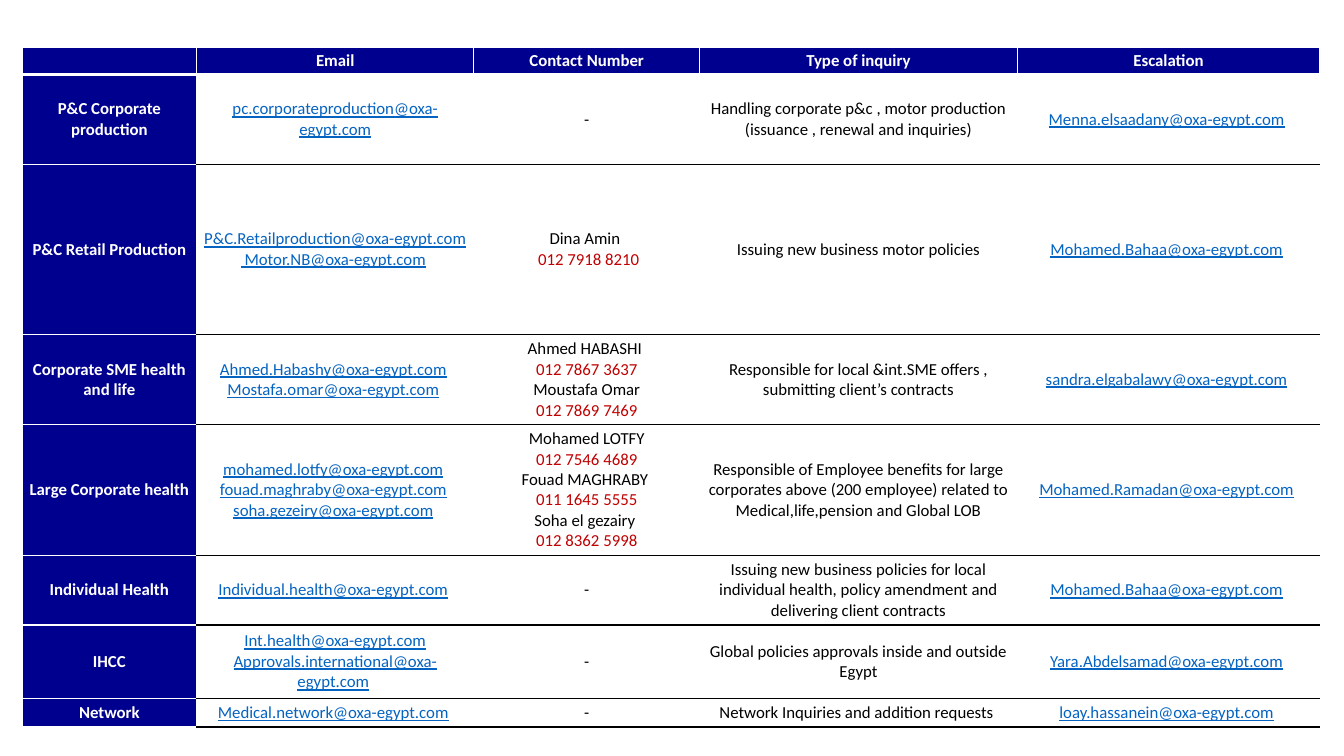
from pptx import Presentation
from pptx.dml.color import RGBColor
from pptx.enum.text import MSO_ANCHOR, PP_ALIGN
from pptx.oxml import parse_xml
from pptx.oxml.ns import nsdecls
from pptx.util import Inches, Pt

THEME = {
    "font": "Calibri", "size": 12,
    "navy": "00008F", "white": "FFFFFF", "black": "000000",
    "link": "0563C1", "phone": "C00000",
}

# Each line of a cell is one paragraph
ROWS = [
    ["", "Email", "Contact Number", "Type of inquiry", "Escalation"],
    ["P&C Corporate production", "pc.corporateproduction@oxa-egypt.com", "-",
     "Handling corporate p&c , motor production (issuance , renewal and inquiries)",
     "Menna.elsaadany@oxa-egypt.com "],
    ["P&C Retail Production",
     "P&C.Retailproduction@oxa-egypt.com\n Motor.NB@oxa-egypt.com ",
     "Dina Amin \n 012 7918 8210",
     "Issuing new business motor policies", "Mohamed.Bahaa@oxa-egypt.com "],
    ["Corporate SME health and life",
     "Ahmed.Habashy@oxa-egypt.com \nMostafa.omar@oxa-egypt.com ",
     "Ahmed HABASHI \n012 7867 3637\nMoustafa Omar\n012 7869 7469",
     "Responsible for local &int.SME offers , submitting client’s contracts",
     "sandra.elgabalawy@oxa-egypt.com "],
    ["Large Corporate health",
     "mohamed.lotfy@oxa-egypt.com \nfouad.maghraby@oxa-egypt.com \n"
     "soha.gezeiry@oxa-egypt.com ",
     "Mohamed LOTFY\n012 7546 4689\nFouad MAGHRABY \n011 1645 5555\n"
     "Soha el gezairy \n012 8362 5998",
     "Responsible of Employee benefits for large corporates above (200 employee) "
     "related to Medical,life,pension and Global LOB",
     "Mohamed.Ramadan@oxa-egypt.com "],
    ["Individual Health", "Individual.health@oxa-egypt.com ", "-",
     "Issuing new business policies for local individual health, "
     "policy amendment and delivering client contracts",
     "Mohamed.Bahaa@oxa-egypt.com "],
    ["IHCC", "Int.health@oxa-egypt.com\nApprovals.international@oxa-egypt.com ", "-",
     "Global policies approvals inside and outside Egypt",
     "Yara.Abdelsamad@oxa-egypt.com "],
    ["Network", "Medical.network@oxa-egypt.com ", "-",
     "Network Inquiries and addition requests ", "loay.hassanein@oxa-egypt.com "],
]
WIDTHS = [1.73, 2.75, 2.24, 3.15, 3]
HEIGHTS = [0.27, 0.89, 1.69, 0.63, 1.2, 0.63, 0.73, 0.16]


def add_edge(cell, side, color, width):
    cell._tc.get_or_add_tcPr().append(parse_xml(
        f'<a:ln{side} {nsdecls("a")} w="{Pt(width)}"><a:solidFill>'
        f'<a:srgbClr val="{THEME[color]}"/></a:solidFill></a:ln{side}>'))


def style_run(run, color, bold=False, line=False):
    font = run.font
    font.name, font.size = THEME["font"], Pt(THEME["size"])
    font.bold, font.underline = bold, line
    font.color.rgb = RGBColor.from_string(THEME[color])


prs = Presentation()
prs.slide_width, prs.slide_height = Inches(13.33), Inches(7.5)
slide = prs.slides.add_slide(prs.slide_layouts[6])

# Contact table
frame = slide.shapes.add_table(len(ROWS), len(WIDTHS), Inches(0.22), Inches(0.47),
                               Inches(12.87), Inches(6.67))
table = frame.table
for col, width in zip(table.columns, WIDTHS):
    col.width = Inches(width)
for row, height in zip(table.rows, HEIGHTS):
    row.height = Inches(height)
frame.height = Inches(6.67)

for r, texts in enumerate(ROWS):
    for c, text in enumerate(texts):
        cell = table.cell(r, c)
        head = r == 0
        label = head or c == 0

        # Borders and fill
        add_edge(cell, "L", "white", 1)
        add_edge(cell, "R", "white", 1)
        add_edge(cell, "T", "white" if label or r == 1 else "black", 1)
        add_edge(cell, "B", "white" if label else "black", 3 if head else 1)
        if label:
            cell.fill.solid()
            cell.fill.fore_color.rgb = RGBColor.from_string(THEME["navy"])
        else:
            cell.fill.background()

        # Text
        cell.vertical_anchor = MSO_ANCHOR.MIDDLE
        cell.margin_left = cell.margin_right = Inches(0.05 if head else 0.07)
        cell.margin_top = cell.margin_bottom = Inches(0.03 if head else 0.04)
        cell.text_frame.text = text
        for para in cell.text_frame.paragraphs:
            para.alignment = PP_ALIGN.CENTER
            para.font.size = Pt(THEME["size"])
            for run in para.runs:
                if label:
                    style_run(run, "white", bold=True)
                elif "@" in run.text:
                    style_run(run, "link", line=True)
                    if run.text.endswith(" "):
                        run.text = run.text.rstrip()
                        tail = para.add_run()
                        tail.text = " "
                        style_run(tail, "black")
                elif run.text.strip().startswith("01"):
                    style_run(run, "phone")
                else:
                    style_run(run, "black")

prs.save("out.pptx")
